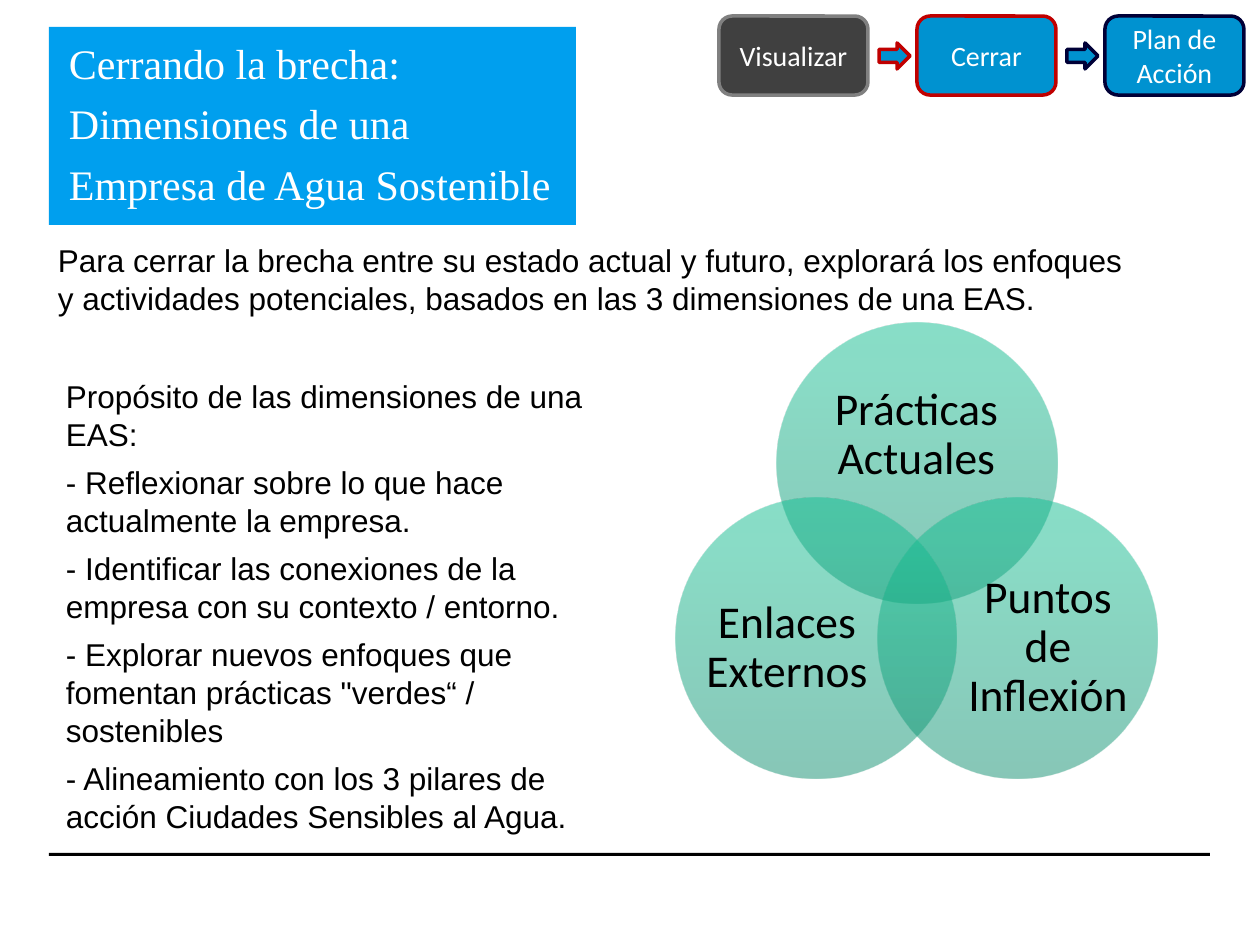
import pptx
import pptx.util
import pptx.dml.color
import pptx.enum.shapes
import pptx.enum.text
import lxml.etree

Pt = pptx.util.Pt
Kind = pptx.enum.shapes.MSO_SHAPE
Align = pptx.enum.text.PP_ALIGN
Anchor = pptx.enum.text.MSO_ANCHOR
NS = "http://schemas.openxmlformats.org/drawingml/2006/main"
PX = 914400 / 126  # EMU in one px

THEME = {
    "white": "FFFFFF", "black": "000000", "title": "009FEE",
    "blue": "0092D0", "dark": "404040", "gray": "808080",
    "red": "C00000", "navy": "000037",
    "green": [(0, "0F8F6E"), (80, "14BA8F"), (100, "10BE91")],
    "serif": "Times New Roman", "sans": "Arial", "label": "Calibri",
    "head": 24, "body": 18, "step": 16, "venn": 26,
}


def add(kind, box, fill=None, line=None):
    """Place a preset shape, or a text box when kind is None."""
    place = [round(v * PX) for v in box]
    if kind is None:
        return slide.shapes.add_textbox(*place)
    shape = slide.shapes.add_shape(kind, *place)
    shape.shadow.inherit = False
    if fill:
        shape.fill.solid()
        shape.fill.fore_color.rgb = pptx.dml.color.RGBColor.from_string(THEME[fill])
    if line:
        shape.line.color.rgb = pptx.dml.color.RGBColor.from_string(THEME[line])
        shape.line.width = Pt(2)
    else:
        shape.line.fill.background()
    return shape


def write(shape, lines, font="sans", size="body", color="black", align=Align.LEFT,
          anchor=Anchor.TOP, pad=(13, 6, 13, 6), before=0, after=0, pitch=None, wrap=True):
    frame = shape.text_frame
    frame.word_wrap = wrap
    frame.vertical_anchor = anchor
    (frame.margin_left, frame.margin_top,
     frame.margin_right, frame.margin_bottom) = [round(v * PX) for v in pad]
    for i, line in enumerate(lines):
        para = frame.paragraphs[0] if i == 0 else frame.add_paragraph()
        para.alignment = align
        para.space_before = Pt(before if i else 0)
        para.space_after = Pt(after)
        if pitch:
            para.line_spacing = pitch
        run = para.add_run()
        run.text = line
        run.font.name = THEME[font]
        run.font.size = Pt(THEME[size])
        run.font.color.rgb = pptx.dml.color.RGBColor.from_string(THEME[color])


deck = pptx.Presentation()
deck.slide_width = round(1260 * PX)
deck.slide_height = round(945 * PX)
slide = deck.slides.add_slide(deck.slide_layouts[6])

# Footer rule
add(Kind.RECTANGLE, (49, 853, 1161, 3), "black")

# Title
title = add(Kind.RECTANGLE, (49, 27, 527, 198), "title")
write(title, ["Cerrando la brecha:", "Dimensiones de una", "Empresa de Agua Sostenible"],
      font="serif", size="head", color="white", pad=(20, 10, 20, 15), before=6, wrap=False)

# Venn diagram: circle corner, label box, label
for left, top, box, label in [
    (777, 323, (814, 372, 205, 126), "Prácticas Actuales"),
    (878, 498, (964, 571, 168, 154), "Puntos de Inflexión"),
    (676, 498, (703, 571, 168, 154), "Enlaces Externos"),
]:
    disc = add(Kind.OVAL, (left, top, 280, 280))
    disc.fill.gradient()
    disc.fill.gradient_angle = 90
    stops = disc.element.spPr.find(f".//{{{NS}}}gsLst")
    for old in list(stops):
        stops.remove(old)
    for pos, color in THEME["green"]:
        stop = lxml.etree.SubElement(stops, f"{{{NS}}}gs", pos=str(pos * 1000))
        tint = lxml.etree.SubElement(stop, f"{{{NS}}}srgbClr", val=color)
        lxml.etree.SubElement(tint, f"{{{NS}}}alpha", val="50000")
    write(add(None, box), [label], font="label", size="venn", align=Align.CENTER,
          anchor=Anchor.MIDDLE, pad=(0, 0, 0, 0), pitch=0.9)

# Purpose and introduction
write(add(None, (53, 371, 578, 475)), [
    "Propósito de las dimensiones de una EAS:",
    "- Reflexionar sobre lo que hace actualmente la empresa.",
    "- Identificar las conexiones de la empresa con su contexto / entorno.",
    "- Explorar nuevos enfoques que fomentan prácticas \"verdes“ / sostenibles",
    "- Alineamiento con los 3 pilares de acción Ciudades Sensibles al Agua.",
], after=6)
write(add(None, (45, 235, 1104, 89)), [
    "Para cerrar la brecha entre su estado actual y futuro, explorará los enfoques "
    "y actividades potenciales, basados en las 3 dimensiones de una EAS.",
], after=6)

# Process steps
for left, width, fill, line, label in [
    (719, 149, "dark", "gray", "Visualizar"),
    (917, 139, "blue", "red", "Cerrar"),
    (1105, 139, "blue", "navy", "Plan de Acción"),
]:
    step = add(Kind.ROUNDED_RECTANGLE, (left, 16, width, 79), fill, line)
    write(step, [label], font="label", size="step", color="white",
          align=Align.CENTER, anchor=Anchor.MIDDLE)

# Arrows between steps
for left, line in [(879, "red"), (1067, "navy")]:
    add(Kind.RIGHT_ARROW, (left, 43, 31, 26), "blue", line)

deck.save("out.pptx")
